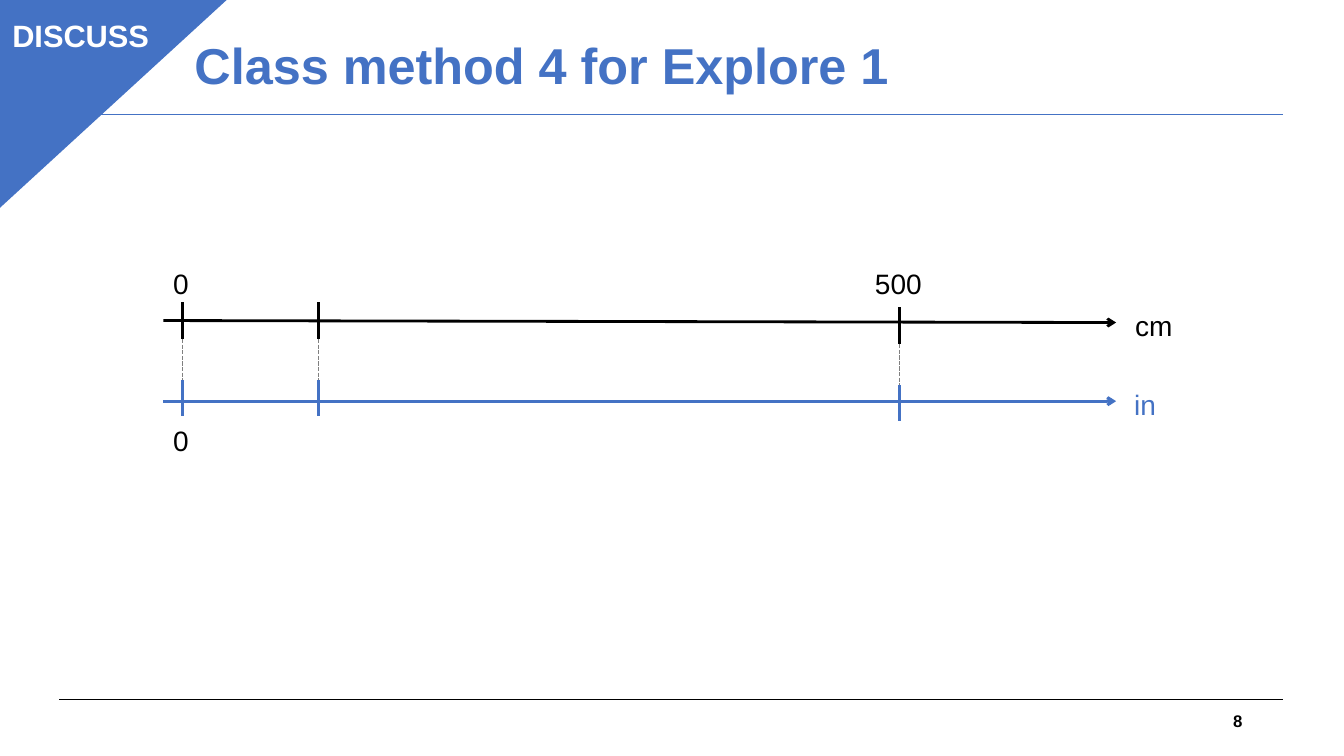
import pptx
import pptx.util
import pptx.dml.color
import pptx.enum.dml
import pptx.enum.shapes
import pptx.enum.text
import pptx.oxml
import pptx.oxml.ns
from pptx.util import Inches

BLUE = pptx.dml.color.RGBColor(0x44, 0x72, 0xC4)
BLACK = pptx.dml.color.RGBColor(0, 0, 0)
GRAY = pptx.dml.color.RGBColor(0x80, 0x80, 0x80)
WHITE = pptx.dml.color.RGBColor(0xFF, 0xFF, 0xFF)

WIDTH, HEIGHT = 13.33, 7.5
ALIGN = pptx.enum.text.PP_ALIGN
ANCHOR = pptx.enum.text.MSO_ANCHOR
qn = pptx.oxml.ns.qn


def add_line(slide, start, end, color, weight, dashed=False, arrow=False):
    connector = slide.shapes.add_connector(
        pptx.enum.shapes.MSO_CONNECTOR.STRAIGHT,
        *(Inches(value) for value in (*start, *end)))
    connector.line.color.rgb = color
    connector.line.width = pptx.util.Pt(weight)
    if dashed:
        connector.line.dash_style = pptx.enum.dml.MSO_LINE.SQUARE_DOT
    if arrow:
        line = connector.line._get_or_add_ln()
        pptx.oxml.ns.qn
        tail = line.makeelement(qn("a:tailEnd"), {"type": "arrow"})
        line.append(tail)
    properties = connector._element.spPr
    properties.append(properties.makeelement(qn("a:effectLst"), {}))


def write(shape, text, size, color, bold=False, align=ALIGN.LEFT,
          anchor=ANCHOR.TOP, wrap=True, spacing=1.0):
    frame = shape.text_frame
    frame.word_wrap = wrap
    frame.vertical_anchor = anchor
    paragraph = frame.paragraphs[0]
    paragraph.alignment = align
    paragraph.line_spacing = spacing
    run = paragraph.add_run()
    run.text = text
    run.font.name = "Arial"
    run.font.size = pptx.util.Pt(size)
    run.font.bold = bold
    run.font.color.rgb = color


def add_text(slide, box, text, size, color, **style):
    shape = slide.shapes.add_textbox(*(Inches(value) for value in box))
    write(shape, text, size, color, **style)


def add_blue_shape(slide, kind, box, weight):
    shape = slide.shapes.add_shape(kind, *(Inches(value) for value in box))
    shape.shadow.inherit = False
    shape.fill.solid()
    shape.fill.fore_color.rgb = BLUE
    shape.line.color.rgb = BLUE
    shape.line.width = pptx.util.Pt(weight)
    return shape


def add_header(slide, left, top, width, height):
    bottom = top + height
    add_line(slide, (left, bottom), (left + width, bottom), BLUE, 0.75)
    add_text(slide, (left + 1.24, top + 0.12, 8.69, 1.11),
             "Class method 4 for Explore 1", 36, BLUE, bold=True,
             anchor=ANCHOR.MIDDLE, spacing=0.9)


def add_corner(slide, left, top, width, height):
    kinds = pptx.enum.shapes.MSO_SHAPE
    triangle = add_blue_shape(slide, kinds.ISOSCELES_TRIANGLE,
                              (left, top, width, height), 1)
    triangle.adjustments[0] = 0
    triangle._element.spPr.find(qn("a:xfrm")).set("flipV", "1")
    label = add_blue_shape(slide, kinds.RECTANGLE,
                           (left + 0.04, top + 0.14, 0.69 * width, 0.47), 0.75)
    write(label, "DISCUSS", 22, WHITE, bold=True, align=ALIGN.CENTER)


def add_footer(slide, left, top, width, height):
    add_line(slide, (left, top), (left + width, top), BLACK, 0.75)
    add_text(slide, (left + width - 3.3, top + 0.01, 3, height), "8", 12, BLACK,
             bold=True, align=ALIGN.RIGHT, anchor=ANCHOR.MIDDLE)


def add_double_number_line(slide, left, top, width, height):
    right = left + width
    upper, lower = top + 0.295 * height, top + 0.695 * height
    half_tick, gap = 0.18, 0.77
    ticks = [(0.02, 0), (0.163, 0), (0.7725, 0.05)]

    for share, drop in ticks:
        x = left + share * width
        start = upper + 0.02 + drop
        add_line(slide, (x, start), (x, start + gap), GRAY, 1, dashed=True)

    add_line(slide, (left, upper), (right, upper + 0.02), BLACK, 2, arrow=True)
    add_line(slide, (left, lower), (right, lower), BLUE, 2, arrow=True)

    for share, drop in ticks:
        x = left + share * width
        for y, color in ((upper, BLACK), (lower - 0.03, BLUE)):
            middle = y + drop
            add_line(slide, (x, middle - half_tick), (x, middle + half_tick),
                     color, 2)

    labels = [
        ("0", left, top, 0.36, BLACK),
        ("0", left, top + 0.78 * height, 0.36, BLACK),
        ("500", left + 6.96, top, 0.67, BLACK),
        ("cm", right + 0.09, top + 0.21 * height, 0.58, BLACK),
        ("in", right + 0.08, top + 0.605 * height, 0.42, BLUE),
    ]
    for text, x, y, label_width, color in labels:
        add_text(slide, (x, y, label_width, 0.44), text, 20, color, wrap=False)


def main():
    presentation = pptx.Presentation()
    presentation.slide_width = Inches(WIDTH)
    presentation.slide_height = Inches(HEIGHT)
    slide = presentation.slides.add_slide(presentation.slide_layouts[6])
    margin, content = 0.59, 0.91 * WIDTH
    add_footer(slide, margin, 6.94, content, 0.4)
    add_header(slide, margin, 0, content, 1.14)
    add_corner(slide, -0.03, -0.02, 2.29, 2.1)
    add_double_number_line(slide, 1.62, 2.59, 9.45, 2)
    presentation.save("out.pptx")


if __name__ == "__main__":
    main()
